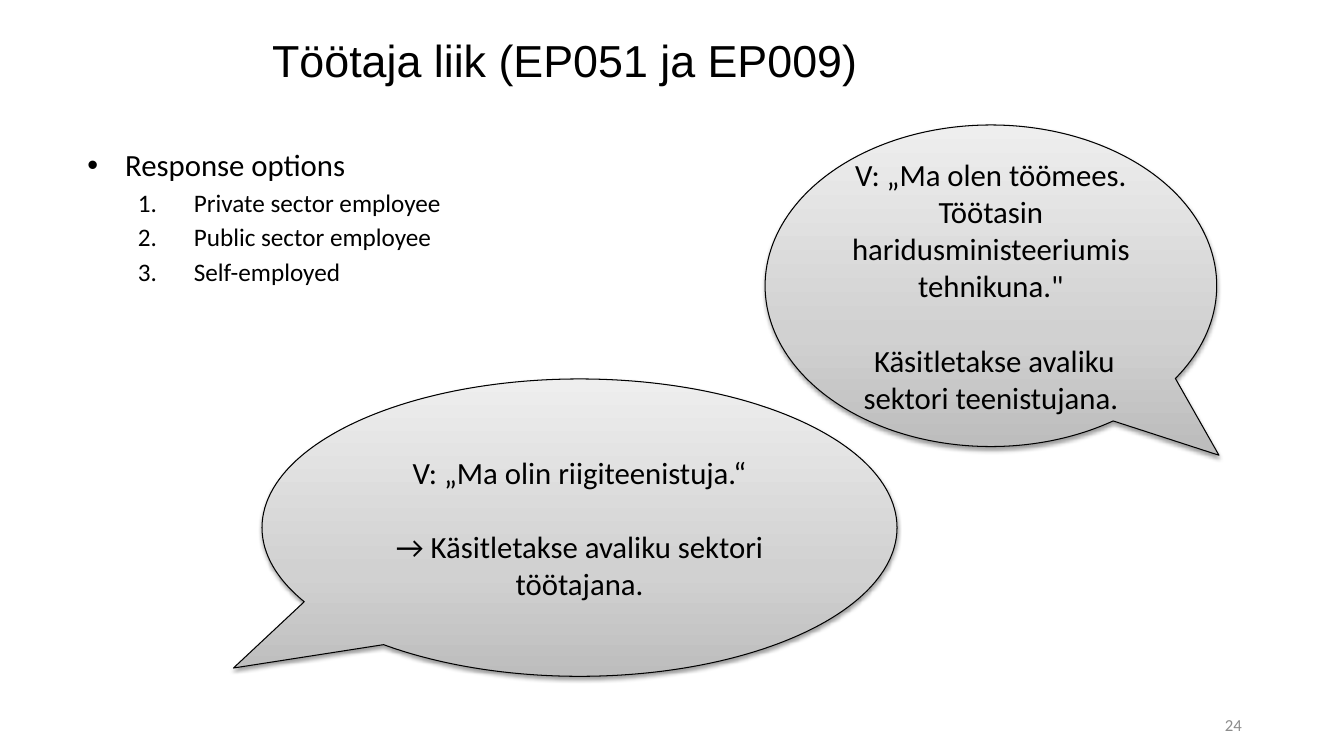
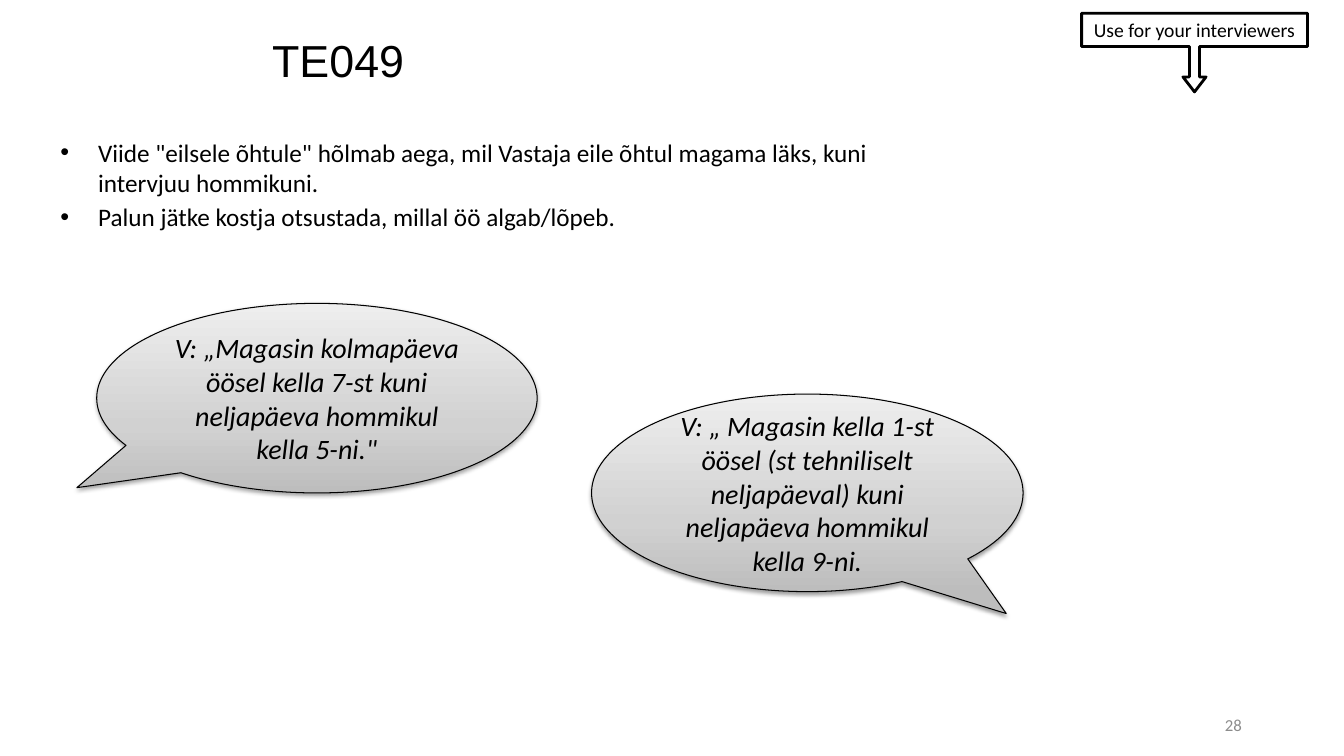
from copy import deepcopy

from lxml.etree import SubElement
from pptx import Presentation
from pptx.dml.color import RGBColor
from pptx.enum.shapes import MSO_SHAPE
from pptx.enum.text import MSO_ANCHOR, MSO_AUTO_SIZE, PP_ALIGN
from pptx.oxml.ns import qn
from pptx.util import Pt

BLACK = RGBColor(0x00, 0x00, 0x00)
WHITE = RGBColor(0xFF, 0xFF, 0xFF)
GREY = RGBColor(0x8C, 0x8C, 0x8C)
BUBBLE_STOPS = [(0, RGBColor(0xBD, 0xBD, 0xBD)),
                (0.35, RGBColor(0xD1, 0xD1, 0xD1)),
                (1, RGBColor(0xEE, 0xEE, 0xEE))]

TITLE_BOX = (187.2, 19.5, 598, 46)
NUMBER_BOX = (678.2, 503.3, 216, 28.8)
BODY_SIZE = (648, 388)
NOTE_BOX = (772.6, 9.4, 161.3, 56.2)
NOTE_ADJUSTMENTS = (0.129, 0.147, 0.19, 0.424)
BULLET = (27, -27, "buChar", {"char": "•"})
NUMBERED = (76, -40, "buAutoNum", {"type": "arabicPeriod"})
LIST_GAP = 3
BUBBLE_GAP = 26.8

SLIDES = [
    {
        "title": "Töötaja liik (EP051 ja EP009)",
        "number": "24",
        "body_at": (55.4, 100.8),
        "body": [
            ("Response options", 22, BULLET),
            ("Private sector employee", 18, NUMBERED),
            ("Public sector employee", 18, NUMBERED),
            ("Self-employed", 18, NUMBERED),
        ],
        "bubble_font": (22, False),
        "bubbles": [
            ((187.2, 270.7, 453.6, 212.4), (-0.545, 0.472),
             ["V: „Ma olin riigiteenistuja.“",
              "→ Käsitletakse avaliku sektori töötajana."]),
            ((546.5, 89.3, 322.6, 229.7), (0.505, 0.527),
             ["V: „Ma olen töömees. Töötasin haridusministeeriumis tehnikuna.\"",
              " Käsitletakse avaliku sektori teenistujana."]),
        ],
    },
    {
        "title": "TE049",
        "number": "28",
        "note": "Use for your interviewers",
        "body_at": (36, 94.3),
        "body": [
            ("Viide \"eilsele õhtule\" hõlmab aega, mil Vastaja eile õhtul "
             "magama läks, kuni intervjuu hommikuni.", 18, BULLET),
            ("Palun jätke kostja otsustada, millal öö algab/lõpeb.", 18, BULLET),
        ],
        "bubble_font": (20, True),
        "bubbles": [
            ((69.1, 216.7, 314.6, 135.4), (-0.545, 0.472),
             ["V: „Magasin kolmapäeva öösel kella 7-st kuni neljapäeva "
              "hommikul kella 5-ni.\""]),
            ((422.6, 281.5, 308.2, 141.1), (0.461, 0.611),
             ["V: „ Magasin kella 1-st öösel (st tehniliselt neljapäeval) kuni "
              "neljapäeva hommikul kella 9-ni."]),
        ],
    },
]


def points(box):
    return [Pt(length) for length in box]


def style(paragraph, size, align=PP_ALIGN.LEFT, color=BLACK, name="Calibri", italic=False):
    paragraph.alignment = align
    font = paragraph.font
    font.size, font.name, font.italic = Pt(size), name, italic
    font.color.rgb = color


def paragraphs(frame, texts, gap):
    """Write the texts with a gap between them and yield each paragraph."""
    frame.word_wrap = True
    for index, text in enumerate(texts):
        paragraph = frame.add_paragraph() if index else frame.paragraphs[0]
        paragraph.text = text
        paragraph.space_before = Pt(gap if index else 0)
        yield paragraph


def add_title(slide, text):
    title = slide.shapes.title
    title.left, title.top, title.width, title.height = points(TITLE_BOX)
    frame = title.text_frame
    frame.vertical_anchor = MSO_ANCHOR.TOP
    frame.auto_size = MSO_AUTO_SIZE.SHAPE_TO_FIT_TEXT
    for paragraph in paragraphs(frame, [text], 0):
        style(paragraph, 32, name="Arial")


def add_number(slide, number):
    frame = slide.shapes.add_textbox(*points(NUMBER_BOX)).text_frame
    frame.vertical_anchor = MSO_ANCHOR.MIDDLE
    for paragraph in paragraphs(frame, [number], 0):
        style(paragraph, 12, PP_ALIGN.RIGHT, GREY)


def add_body(slide, position, items):
    frame = slide.shapes.add_textbox(*points(position + BODY_SIZE)).text_frame
    lines = paragraphs(frame, [text for text, _, _ in items], LIST_GAP)
    for paragraph, (_, size, (margin, indent, tag, marker)) in zip(lines, items):
        properties = paragraph._p.get_or_add_pPr()
        properties.set("marL", str(Pt(margin)))
        properties.set("indent", str(Pt(indent)))
        SubElement(properties, qn("a:buFont"), typeface="Arial" if tag == "buChar" else "+mj-lt")
        SubElement(properties, qn("a:" + tag), marker)
        style(paragraph, size)


def add_callout(slide, kind, box, adjustments, texts, size, line_width, italic=False):
    callout = slide.shapes.add_shape(kind, *points(box))
    for index, value in enumerate(adjustments):
        callout.adjustments[index] = value
    callout.line.color.rgb = BLACK
    callout.line.width = Pt(line_width)
    callout.shadow.inherit = False
    callout.text_frame.vertical_anchor = MSO_ANCHOR.MIDDLE
    for paragraph in paragraphs(callout.text_frame, texts, BUBBLE_GAP):
        style(paragraph, size, PP_ALIGN.CENTER, italic=italic)
    return callout


def shade(bubble):
    """Give the bubble its grey gradient and soft shadow."""
    bubble.fill.gradient()
    bubble.fill.gradient_angle = 90
    properties = bubble.element.spPr
    stops = properties.find(".//" + qn("a:gsLst"))
    stops.insert(1, deepcopy(stops[0]))
    for stop, (position, color) in zip(bubble.fill.gradient_stops, BUBBLE_STOPS):
        stop.position = position
        stop.color.rgb = color
    shadow = SubElement(properties.find(qn("a:effectLst")), qn("a:outerShdw"),
                        blurRad=str(Pt(3.1)), dist=str(Pt(1.6)), dir="5400000", rotWithShape="0")
    shadow_color = SubElement(shadow, qn("a:srgbClr"), val=str(BLACK))
    SubElement(shadow_color, qn("a:alpha"), val="38000")


def main():
    deck = Presentation()
    deck.slide_width, deck.slide_height = Pt(960), Pt(540)
    title_only = deck.slide_layouts[5]
    for content in SLIDES:
        slide = deck.slides.add_slide(title_only)
        add_number(slide, content["number"])
        add_title(slide, content["title"])
        if "note" in content:
            note = add_callout(slide, MSO_SHAPE.DOWN_ARROW_CALLOUT, NOTE_BOX,
                               NOTE_ADJUSTMENTS, [content["note"]], 14, 2)
            note.fill.solid()
            note.fill.fore_color.rgb = WHITE
        add_body(slide, content["body_at"], content["body"])
        size, italic = content["bubble_font"]
        for box, tail, texts in content["bubbles"]:
            shade(add_callout(slide, MSO_SHAPE.OVAL_CALLOUT, box, tail, texts,
                              size, 0.75, italic))
    deck.save("out.pptx")


if __name__ == "__main__":
    main()
